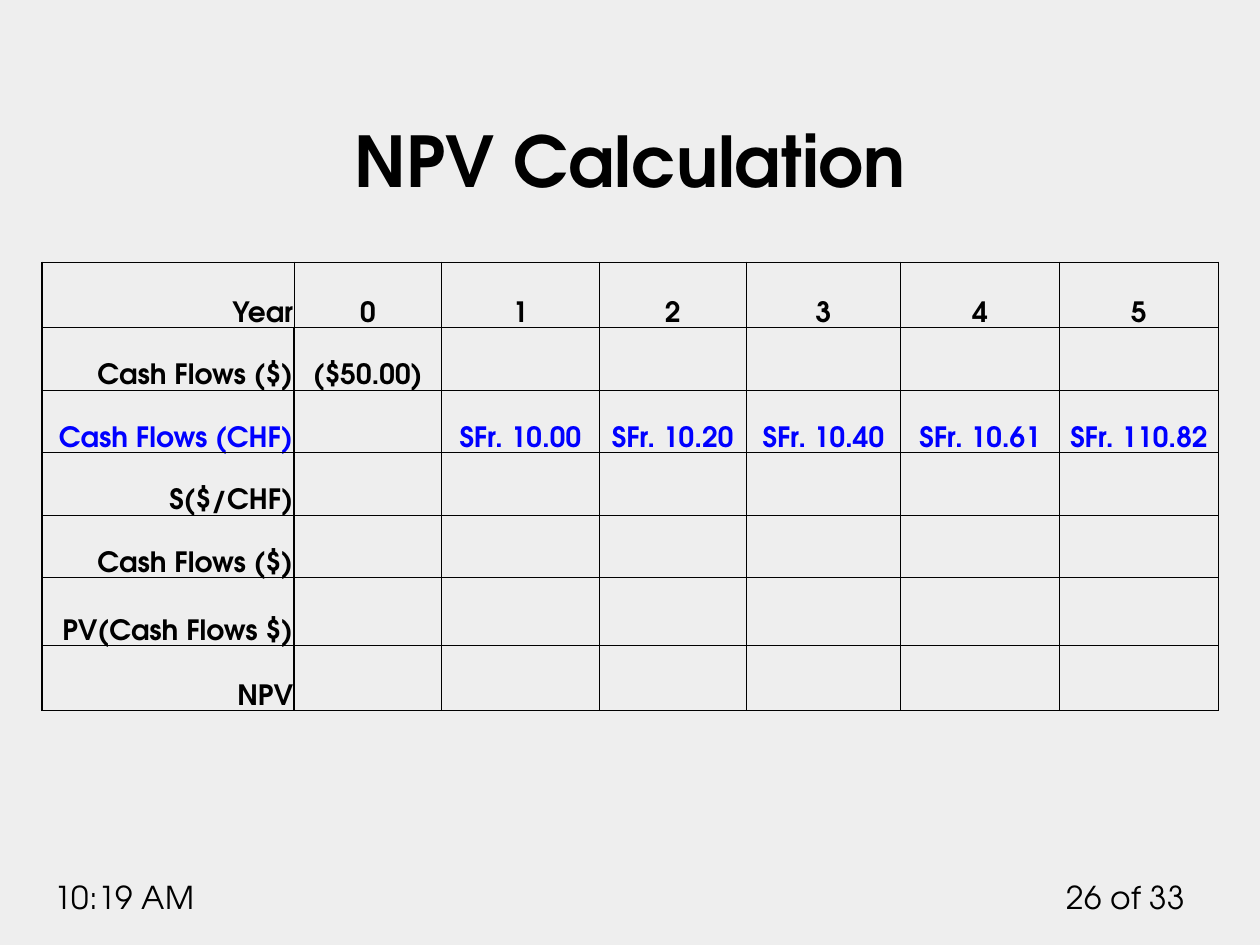
from lxml.etree import SubElement
from pptx import Presentation
from pptx.dml.color import RGBColor
from pptx.enum.text import MSO_ANCHOR, PP_ALIGN
from pptx.oxml.ns import qn
from pptx.util import Cm, Pt

FONT = "TeX Gyre Adventor"
BLACK, BLUE, BACKGROUND = "000000", "0000FF", "EEEEEE"

# Content: one tuple per table row, left to right
ROWS = [
    ("Year", "0", "1", "2", "3", "4", "5"),
    ("Cash Flows ($)", "($50.00)"),
    ("Cash Flows (CHF)", "", "SFr. 10.00", "SFr. 10.20", "SFr. 10.40",
     "SFr. 10.61", "SFr. 110.82"),
    ("S($/CHF)",),
    ("Cash Flows ($)",),
    ("PV(Cash Flows $)",),
    ("NPV",),
]
CHF_ROW = 2
COLUMN_WIDTHS = [5.08, 2.97, 3.18, 2.96, 3.12, 3.2, 3.2]
ROW_HEIGHTS = [1.31, 1.26, 1.26, 1.26, 1.26, 1.37, 1.31]

# Text, left, top, width, height, size, bold, alignment, anchor
TEXTS = [
    ("26 of 33", 21.17, 17.57, 2.96, 1.02, 18, False, PP_ALIGN.RIGHT, MSO_ANCHOR.TOP),
    ("10:19 AM", 0.85, 17.57, 4.02, 1.02, 18, False, PP_ALIGN.LEFT, MSO_ANCHOR.TOP),
    ("NPV Calculation", 1.27, 1, 22.86, 3.18, 40, True, PP_ALIGN.CENTER, MSO_ANCHOR.BOTTOM),
]


def color(code):
    return RGBColor.from_string(code)


def style(para, size, bold, align, code=BLACK):
    para.alignment = align
    para.font.name = FONT
    para.font.size = Pt(size)
    para.font.bold = bold
    para.font.color.rgb = color(code)


def add_text(page, text, left, top, width, height, size, bold, align, anchor):
    box = page.shapes.add_textbox(Cm(left), Cm(top), Cm(width), Cm(height))
    frame = box.text_frame
    frame.word_wrap = True
    frame.vertical_anchor = anchor
    frame.text = text
    style(frame.paragraphs[0], size, bold, align)


def set_borders(cell, row, column):
    """Thick lines run round the table and round the body of values."""
    last_row, last_column = len(ROWS) - 1, len(COLUMN_WIDTHS) - 1
    thick = {
        "L": column == 0 or (column == 1 and row > 0),
        "R": column == last_column or (column == 0 and row > 0),
        "T": row == 0 or (row == 1 and column > 0),
        "B": row == last_row or (row == 0 and column > 0),
    }
    properties = cell._tc.get_or_add_tcPr()
    for side, is_thick in thick.items():
        line = SubElement(properties, qn(f"a:ln{side}"), w=str(Pt(1 if is_thick else 0.5)))
        fill = SubElement(line, qn("a:solidFill"))
        SubElement(fill, qn("a:srgbClr"), val=BLACK)


def add_cash_flow_table(page):
    table = page.shapes.add_table(
        len(ROWS), len(COLUMN_WIDTHS), Cm(0.85), Cm(5.29),
        Cm(sum(COLUMN_WIDTHS)), Cm(sum(ROW_HEIGHTS))).table
    table.first_row = table.horz_banding = False
    for column, width in zip(table.columns, COLUMN_WIDTHS):
        column.width = Cm(width)
    for row, (values, height) in enumerate(zip(ROWS, ROW_HEIGHTS)):
        table.rows[row].height = Cm(height)
        for column in range(len(COLUMN_WIDTHS)):
            cell = table.cell(row, column)
            set_borders(cell, row, column)
            cell.fill.background()
            cell.vertical_anchor = MSO_ANCHOR.BOTTOM
            cell.margin_left = cell.margin_right = cell.margin_top = Cm(0.02)
            cell.margin_bottom = 0
            if column < len(values):
                cell.text = values[column]
            style(cell.text_frame.paragraphs[0], 16, True,
                  PP_ALIGN.CENTER if column else PP_ALIGN.RIGHT,
                  BLUE if row == CHF_ROW else BLACK)


def main():
    deck = Presentation()
    deck.slide_width, deck.slide_height = Cm(25.4), Cm(19.05)
    page = deck.slides.add_slide(deck.slide_layouts[6])
    page.background.fill.solid()
    page.background.fill.fore_color.rgb = color(BACKGROUND)

    # Page number, time and title, then the table
    for text in TEXTS:
        add_text(page, *text)
    add_cash_flow_table(page)
    deck.save("out.pptx")


if __name__ == "__main__":
    main()
